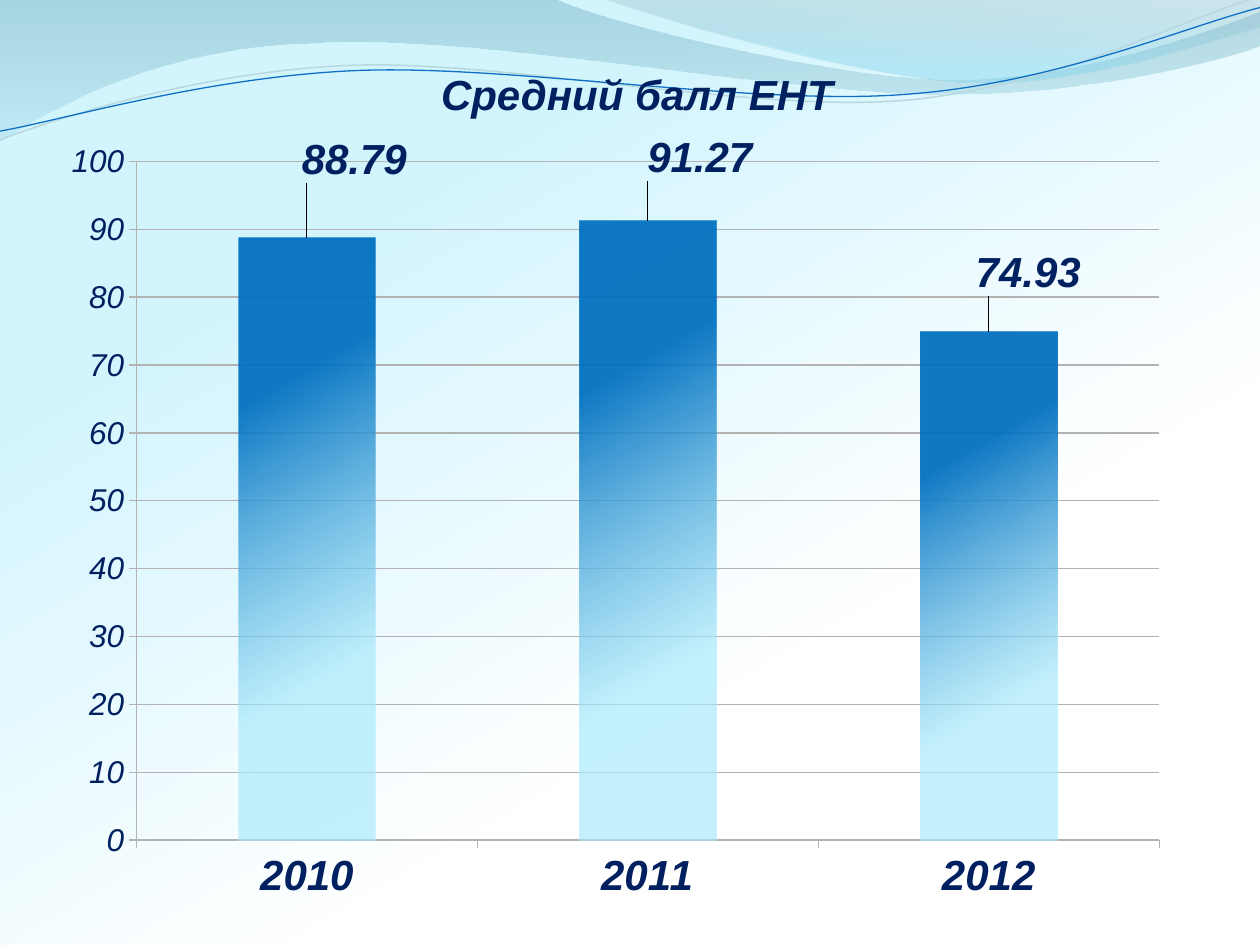
from lxml.etree import SubElement, Element
from pptx import Presentation
from pptx.chart.data import CategoryChartData
from pptx.dml.color import RGBColor
from pptx.enum.chart import XL_CHART_TYPE as ChartType, XL_LABEL_POSITION as LabelPosition
from pptx.enum.chart import XL_TICK_MARK as TickMark
from pptx.enum.text import MSO_ANCHOR as Anchor, PP_ALIGN as Align
from pptx.oxml.ns import qn
from pptx.util import Pt

HEADING = "Средний балл ЕНТ"
SCORES = [("2010", 88.79), ("2011", 91.27), ("2012", 74.93)]
LABEL_SHIFTS = [(0.042, -0.062), (0.046, -0.043), (0.035, -0.038)]
PLOT_LAYOUT = {"layoutTarget": "inner", "xMode": "edge", "yMode": "edge",
               "x": 0.077, "y": 0.041, "w": 0.904, "h": 0.862}
NAVY, GRID = "002060", "B3B3B3"

SKY = [(25, "D2F4FD", 100), (68, "FFFFFF", 100), (72, "FFFFFF", 100)]
BAR = [(25, "0070C0", 93), (72, "A6E9FB", 65)]

BANDS = [
    ([(0, 0), (316.8, -0.7),
      (342.7, 12.2, 478.1, 45.4, 545.8, 45.4), (614.2, 45.4, 689.8, 18.7, 720, 6.5),
      (720.7, 25.9),
      (707.8, 31.7, 626.4, 54.7, 537.1, 54), (447.8, 54, 275, 20.2, 185, 24.5),
      (92.9, 25.9, 33.1, 59.8, -0.7, 81.4)],
     [(0, "74B0C0", 45), (100, "B4E4F0", 55)]),
    ([(344.9, -0.7),
      (366.5, 7.9, 491, 44.6, 553.7, 46.8), (616.3, 49.7, 691.9, 23, 720, 15.1),
      (720, 0)],
     [(0, "97B7C0", 30), (80, "82D6ED", 45)]),
]
STRANDS = [
    ([(0, 79.9), (34.6, 67, 113.8, 41, 199.4, 37.4),
      (284.4, 33.8, 427, 64.1, 513.4, 57.6), (599.8, 51.1, 675.4, 10.8, 718.6, -1.4)],
     "B9D7DF", 0.85),
    ([(0, 74.9), (33.8, 69.1, 118.1, 43.9, 203.8, 40.3),
      (290.2, 36.7, 429.8, 60.5, 516.2, 54), (601.9, 48.2, 677.5, 15.1, 720, 4.3)],
     "0F6FC6", 0.75),
]


def rgb(value):
    return RGBColor.from_string(value)


def set_gradient(fill, holder, stops, angle):
    fill.solid()
    solid = holder.find(".//" + qn("a:solidFill"))
    gradient = Element(qn("a:gradFill"), rotWithShape="1")
    stop_list = SubElement(gradient, qn("a:gsLst"))
    for position, value, opacity in stops:
        stop = SubElement(stop_list, qn("a:gs"), pos=str(position * 1000))
        color = SubElement(stop, qn("a:srgbClr"), val=value)
        if opacity < 100:
            SubElement(color, qn("a:alpha"), val=str(opacity * 1000))
    SubElement(gradient, qn("a:lin"), ang=str(angle * 60000), scaled="0")
    solid.getparent().replace(solid, gradient)


def draw_wave(slide, segments, close):
    start, *rest = [(segment[i] * 100, segment[i + 1] * 100)
                    for segment in segments for i in range(0, len(segment), 2)]
    builder = slide.shapes.build_freeform(*start, scale=Pt(1) / 100)
    builder.add_line_segments(rest, close=close)
    wave = builder.convert_to_shape()
    wave.shadow.inherit = False

    corners = iter(wave._element.findall(".//" + qn("a:lnTo")))
    for segment in segments[1:]:
        first = next(corners)
        if len(segment) == 6:
            curve = Element(qn("a:cubicBezTo"))
            first.addprevious(curve)
            for corner in (first, next(corners), next(corners)):
                curve.append(corner[0])
                corner.getparent().remove(corner)
    return wave


def manual_layout(settings):
    layout = Element(qn("c:layout"))
    manual = SubElement(layout, qn("c:manualLayout"))
    for key, value in settings.items():
        SubElement(manual, qn("c:" + key), val=str(value))
    return layout


def style_font(font, size, bold):
    font.name, font.size = "Arial", Pt(size)
    font.bold, font.italic = bold, True
    font.color.rgb = rgb(NAVY)


def add_waves(slide):
    for segments, stops in BANDS:
        band = draw_wave(slide, segments, True)
        set_gradient(band.fill, band._element.spPr, stops, 90)
        band.line.fill.background()
    for segments, color, width in STRANDS:
        strand = draw_wave(slide, segments, False)
        strand.fill.background()
        strand.line.color.rgb = rgb(color)
        strand.line.width = Pt(width)


def place_heading(slide):
    heading = slide.shapes.title
    heading.left, heading.top, heading.width, heading.height = Pt(236), Pt(28), Pt(256), Pt(40)
    frame = heading.text_frame
    frame.text = HEADING
    frame.vertical_anchor = Anchor.BOTTOM
    frame.margin_left = frame.margin_right = frame.margin_bottom = 0
    frame.margin_top = Pt(3.6)
    frame.paragraphs[0].alignment = Align.CENTER
    style_font(frame.paragraphs[0].runs[0].font, 24, True)
    slide.shapes._spTree.append(heading._element)


def add_score_chart(slide):
    data = CategoryChartData()
    data.categories = [year for year, _ in SCORES]
    data.add_series("Series 1", [score for _, score in SCORES])
    chart = slide.shapes.add_chart(ChartType.COLUMN_CLUSTERED, Pt(28.2), Pt(73.8),
                                   Pt(646.5), Pt(450), data).chart
    chart.has_legend = chart.has_title = False
    chart.font.name, chart.font.size = "Arial", Pt(18)

    plot_area = chart._chartSpace.find(".//" + qn("c:plotArea"))
    for old in plot_area.findall(qn("c:layout")):
        plot_area.remove(old)
    plot_area.insert(0, manual_layout(PLOT_LAYOUT))

    for axis, size, bold in ((chart.category_axis, 24, True), (chart.value_axis, 18, False)):
        axis.major_tick_mark = TickMark.OUTSIDE
        axis.format.line.color.rgb = rgb(GRID)
        style_font(axis.tick_labels.font, size, bold)
    scale = chart.value_axis
    scale.minimum_scale, scale.maximum_scale, scale.major_unit = 0, 100, 10
    scale.major_gridlines.format.line.color.rgb = rgb(GRID)

    plot = chart.plots[0]
    plot.gap_width = 150
    plot.vary_by_categories = False
    bars = plot.series[0]
    set_gradient(bars.format.fill, bars._element, BAR, 60)
    bars.data_labels.show_value = True
    style_font(bars.data_labels.font, 24, True)
    for index, (x, y) in enumerate(LABEL_SHIFTS):
        label = bars.points[index].data_label
        style_font(label.font, 24, True)
        label.position = LabelPosition.OUTSIDE_END
        label._get_or_add_dLbl().insert(1, manual_layout({"x": x, "y": y}))
    hide_leader_lines(bars.data_labels._element)


def hide_leader_lines(labels):
    for switch in labels.findall(qn("c:showLeaderLines")):
        labels.remove(switch)
    extensions = SubElement(labels, qn("c:extLst"))
    extension = SubElement(extensions, qn("c:ext"), uri="{CE6537A1-D6FC-4f65-9D91-7224C49458BB}")
    namespace = "http://schemas.microsoft.com/office/drawing/2012/chart"
    SubElement(extension, f"{{{namespace}}}showLeaderLines", nsmap={"c15": namespace}, val="0")


def main():
    deck = Presentation()
    deck.slide_width, deck.slide_height = Pt(720), Pt(540)
    slide = deck.slides.add_slide(deck.slide_layouts[5])
    set_gradient(slide.background.fill, slide.element, SKY, 60)
    add_waves(slide)
    place_heading(slide)
    add_score_chart(slide)
    deck.save("out.pptx")


if __name__ == "__main__":
    main()
